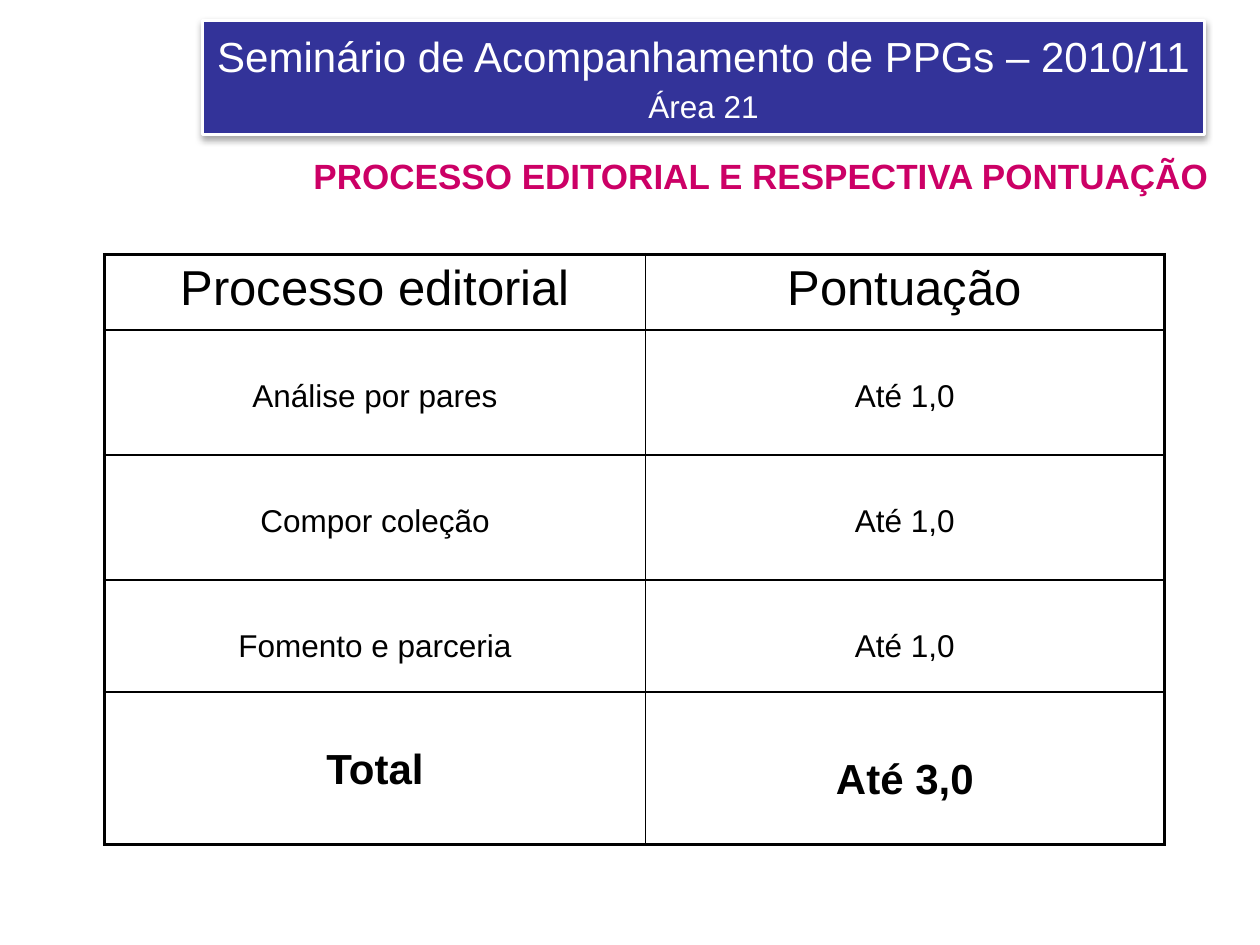
"""Build the slide on the editorial process and its scoring."""
from dataclasses import dataclass

from lxml import etree
from pptx import Presentation
from pptx import util as u
from pptx.dml.color import RGBColor
from pptx.enum import shapes, text
from pptx.oxml import ns


@dataclass(frozen=True)
class Theme:
    """Colours, font and type sizes."""
    font: str = "Arial"
    white: str = "FFFFFF"
    black: str = "000000"
    blue: str = "333399"
    pink: str = "CC0066"
    body: int = 18
    title: int = 20
    large: int = 24
    head: int = 28
    thin: float = 1
    thick: float = 2.25


LOOK = Theme()
COLS = (10.9, 10.46)
ROWS = (
    (1.52, LOOK.head, False, (("Processo editorial", 0.13), ("Pontuação", 0.13))),
    (2.52, LOOK.body, False, (("Análise por pares", 0.99), ("Até 1,0", 0.99))),
    (2.52, LOOK.body, False, (("Compor coleção", 0.99), ("Até 1,0", 0.99))),
    (2.26, LOOK.body, False, (("Fomento e parceria", 0.99), ("Até 1,0", 0.99))),
    (3.08, LOOK.large, True, (("Total", 1.1), ("Até 3,0", 1.3))),
)


def rgb(code):
    """Turn a hex code into a colour."""
    return RGBColor.from_string(code)


def node(parent, tag, **attrs):
    """Add an XML child with attributes."""
    item = etree.SubElement(parent, ns.qn(tag))
    for key, val in attrs.items():
        item.set(key, str(val))
    return item


def style(para, size, color, bold=False):
    """Centre a paragraph and format its runs."""
    para.alignment = text.PP_ALIGN.CENTER
    for run in para.runs:
        font = run.font
        font.name, font.size, font.bold = LOOK.font, u.Pt(size), bold
        font.color.rgb = rgb(color)


def shade(shape):
    """Give a shape a soft shadow below it."""
    shape.shadow.inherit = False
    glow = node(shape._element.spPr.find(ns.qn("a:effectLst")), "a:outerShdw",
                blurRad=u.Pt(4), dist=u.Pt(2), dir=5400000, rotWithShape=0)
    tint = node(glow, "a:srgbClr", val=LOOK.black)
    node(tint, "a:alpha", val=35000)


def banner(slide):
    """Draw the seminar banner."""
    box = slide.shapes.add_shape(shapes.MSO_SHAPE.RECTANGLE, u.Cm(4.09),
                                 u.Cm(0.41), u.Cm(20.19), u.Cm(2.31))
    box.fill.solid()
    box.fill.fore_color.rgb = rgb(LOOK.blue)
    box.line.color.rgb = rgb(LOOK.white)
    box.line.width = u.Pt(1.57)
    shade(box)
    frame = box.text_frame
    frame.margin_left = frame.margin_right = u.Cm(0.2)
    frame.vertical_anchor = text.MSO_ANCHOR.MIDDLE
    frame.text = "Seminário de Acompanhamento de PPGs – 2010/11\nÁrea 21"
    for para, size in zip(frame.paragraphs, (LOOK.large, LOOK.body)):
        style(para, size, LOOK.white)
    frame.paragraphs[1].space_before = u.Pt(4)


def title(slide):
    """Write the slide title."""
    box = slide.shapes.add_textbox(u.Cm(5.89), u.Cm(2.72), u.Cm(18.9), u.Cm(1.37))
    frame = box.text_frame
    frame.word_wrap = True
    frame.vertical_anchor = text.MSO_ANCHOR.BOTTOM
    frame.text = "PROCESSO EDITORIAL E RESPECTIVA PONTUAÇÃO"
    style(frame.paragraphs[0], LOOK.title, LOOK.pink, True)


def border(cell, row, col):
    """Rule a cell, thick on the outer edges of the table."""
    props = cell._tc.get_or_add_tcPr()
    edges = (("a:lnL", col == 0), ("a:lnR", col == len(COLS) - 1),
             ("a:lnT", row == 0), ("a:lnB", row == len(ROWS) - 1))
    for tag, outer in edges:
        width = LOOK.thick if outer else LOOK.thin
        line = node(props, tag, w=u.Pt(width))
        node(node(line, "a:solidFill"), "a:srgbClr", val=LOOK.black)


def grid(slide):
    """Build the scoring table."""
    table = slide.shapes.add_table(
        len(ROWS), len(COLS), u.Cm(2.11), u.Cm(5.13), u.Cm(sum(COLS)),
        u.Cm(sum(row[0] for row in ROWS))).table
    table.first_row = table.horz_banding = False
    for col, width in enumerate(COLS):
        table.columns[col].width = u.Cm(width)
    for row, (height, size, bold, items) in enumerate(ROWS):
        table.rows[row].height = u.Cm(height)
        for col, (label, top) in enumerate(items):
            cell = table.cell(row, col)
            cell.margin_top = u.Cm(top)
            cell.text_frame.text = label
            style(cell.text_frame.paragraphs[0], size, LOOK.black, bold)
            border(cell, row, col)
            cell.fill.background()


def main():
    """Assemble and save the slide."""
    deck = Presentation()
    deck.slide_width, deck.slide_height = u.Cm(25.4), u.Cm(19.05)
    slide = deck.slides.add_slide(deck.slide_layouts[6])
    banner(slide)
    title(slide)
    grid(slide)
    deck.save("out.pptx")


if __name__ == "__main__":
    main()
